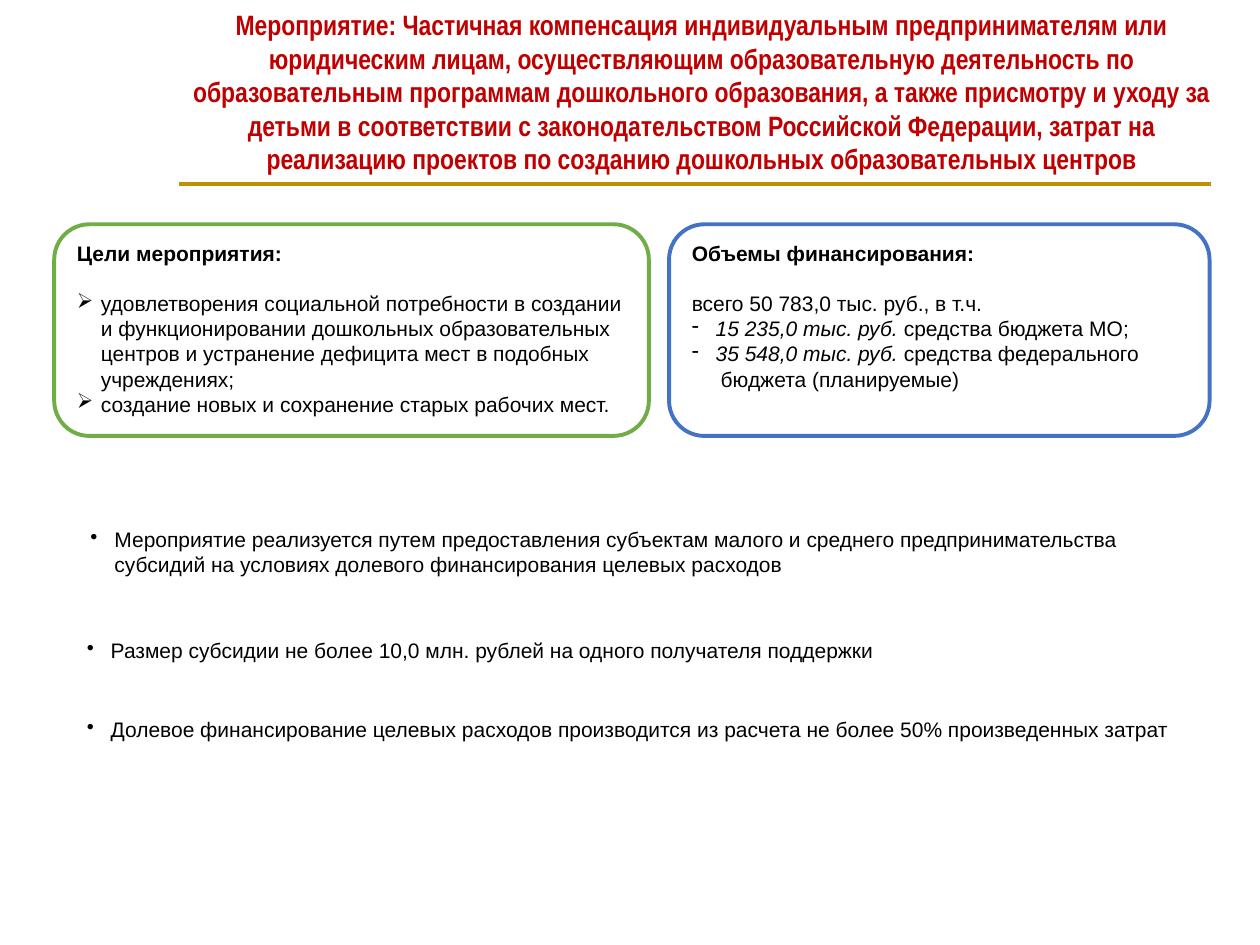
from pptx import Presentation
from pptx import util as u
from pptx.dml.color import RGBColor
from pptx.enum import shapes, text
from lxml import etree

NS = "{http://schemas.openxmlformats.org/drawingml/2006/main}"


def paint(part, color):
    part.solid()
    part.fore_color.rgb = RGBColor.from_string(color)


def write(frame, words, size=12, name="Arial", color="000000", bold=False,
          mark=None, left=0, gap=0, align=text.PP_ALIGN.LEFT):
    para = frame.paragraphs[0]
    if para.runs:
        para = frame.add_paragraph()
    para.alignment = align
    para.space_before = u.Pt(gap)
    props = para._p.get_or_add_pPr()
    props.set("marL", str(u.Inches(left)))
    props.set("indent", str(u.Inches(-left if mark else 0)))
    if mark:
        etree.SubElement(props, NS + "buChar", char=mark)
    else:
        etree.SubElement(props, NS + "buNone")
    for part, slant in [(words, False)] if isinstance(words, str) else words:
        run = para.add_run()
        run.text = part
        font = run.font
        font.size, font.name = u.Pt(size), name
        font.bold, font.italic = bold, slant
        paint(font.fill, color)


deck = Presentation()
deck.slide_width, deck.slide_height = u.Inches(10), u.Inches(7.5)
slide = deck.slides.add_slide(deck.slide_layouts[5])

title = slide.shapes.title
title.left, title.top = u.Inches(1.42), u.Inches(0.01)
title.width, title.height = u.Inches(8.3), u.Inches(1.45)
title.text_frame.auto_size = text.MSO_AUTO_SIZE.NONE
title.text_frame.vertical_anchor = text.MSO_ANCHOR.TOP
write(title.text_frame,
      "Мероприятие: Частичная компенсация индивидуальным предпринимателям или "
      "юридическим лицам, осуществляющим образовательную деятельность по "
      "образовательным программам дошкольного образования, а также присмотру и "
      "уходу за детьми в соответствии с законодательством Российской Федерации, "
      "затрат на реализацию проектов по созданию дошкольных образовательных центров",
      size=16, name="Arial Narrow", color="C00000", bold=True,
      align=text.PP_ALIGN.CENTER)

rule = slide.shapes.add_connector(shapes.MSO_CONNECTOR.STRAIGHT, u.Inches(1.42),
                                  u.Inches(1.46), u.Inches(9.61), u.Inches(1.46))
paint(rule.line.fill, "BF9000")
rule.line.width = u.Pt(2.25)
etree.SubElement(rule._element.spPr, NS + "effectLst")

goals = [
    ("удовлетворения социальной потребности в создании и функционировании "
     "дошкольных образовательных центров и устранение дефицита мест в подобных "
     "учреждениях;", dict(mark="➢", left=0.19, gap=14)),
    ("создание новых и сохранение старых рабочих мест.", dict(mark="➢", left=0.19)),
]
funds = [
    ("всего 50 783,0 тыс. руб., в т.ч.", dict(gap=14)),
    ([("15 235,0 тыс. руб. ", True), ("средства бюджета МО;", False)],
     dict(mark="-", left=0.19)),
    ([("35 548,0 тыс. руб.", True), (" средства федерального", False)],
     dict(mark="-", left=0.19)),
    ("бюджета (планируемые)", dict(left=0.23)),
]
for x, wide, color, head, rows in [
    (0.43, 4.72, "70AD47", "Цели мероприятия:", goals),
    (5.31, 4.29, "4472C4", "Объемы финансирования:", funds),
]:
    card = slide.shapes.add_shape(shapes.MSO_SHAPE.ROUNDED_RECTANGLE, u.Inches(x),
                                  u.Inches(1.78), u.Inches(wide), u.Inches(1.68))
    card.shadow.inherit = False
    paint(card.fill, "FFFFFF")
    paint(card.line.fill, color)
    card.line.width = u.Pt(2.25)
    frame = card.text_frame
    frame.word_wrap = True
    frame.vertical_anchor = text.MSO_ANCHOR.TOP
    write(frame, head, bold=True)
    for words, form in rows:
        write(frame, words, **form)

for x, y, wide, high, words in [
    (0.62, 4.13, 8.9, 0.5,
     "Мероприятие реализуется путем предоставления субъектам малого и среднего "
     "предпринимательства субсидий на условиях долевого финансирования целевых расходов"),
    (0.59, 5.01, 8.58, 0.3,
     "Размер субсидии не более 10,0 млн. рублей на одного получателя поддержки"),
    (0.59, 5.64, 9.02, 0.3,
     "Долевое финансирование целевых расходов производится из расчета не более "
     "50% произведенных затрат"),
]:
    note = slide.shapes.add_textbox(u.Inches(x), u.Inches(y), u.Inches(wide), u.Inches(high))
    note.text_frame.word_wrap = True
    write(note.text_frame, words, mark="•", left=0.19)

deck.save("out.pptx")
